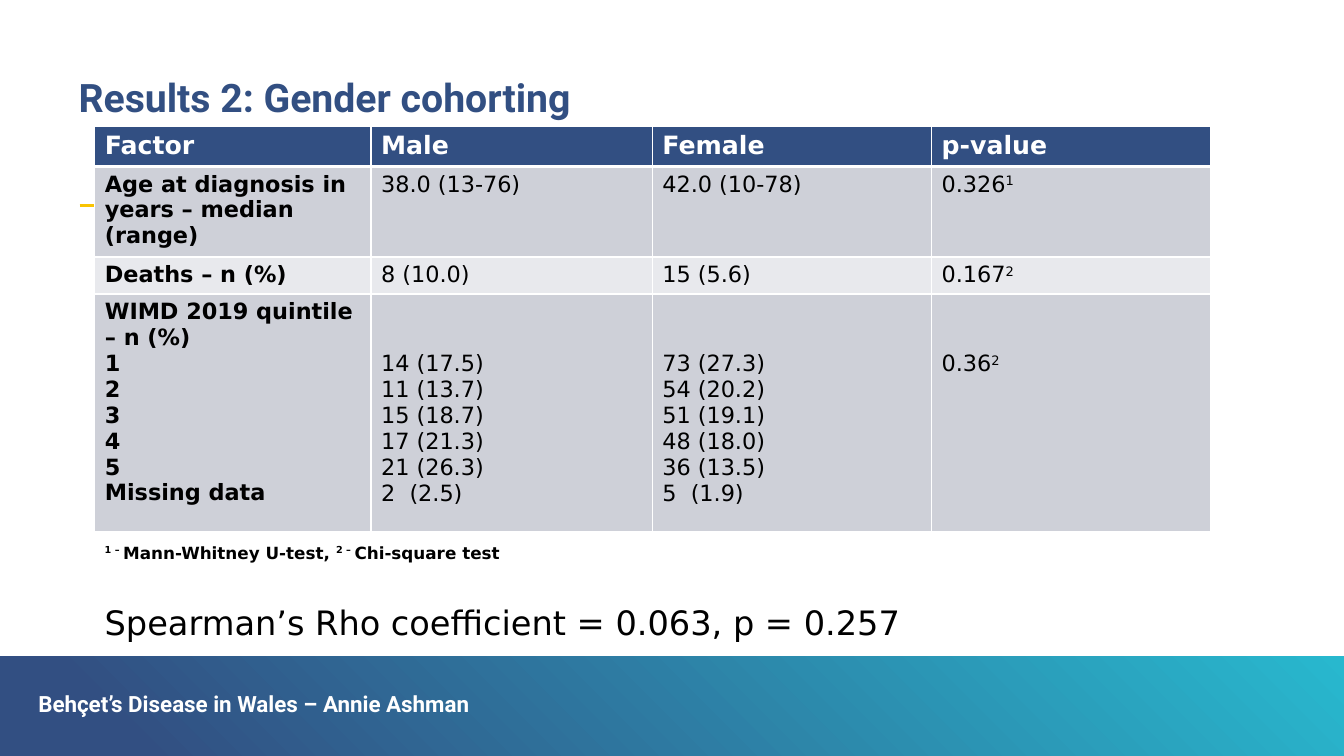
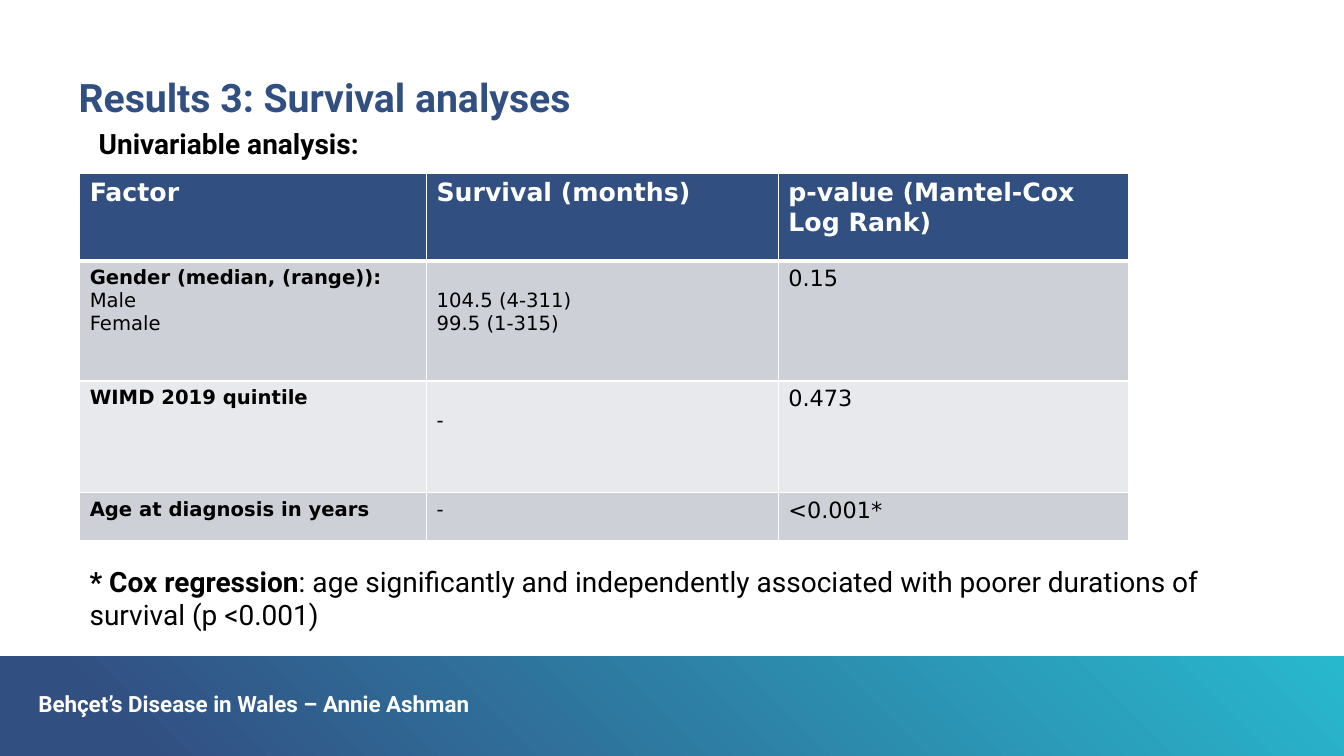
from dataclasses import dataclass

from lxml import etree
from pptx import Presentation
from pptx.dml.color import RGBColor
from pptx.enum.shapes import MSO_CONNECTOR as Connector, MSO_SHAPE as Shape
from pptx.oxml.ns import qn
from pptx.util import Inches, Pt

NAVY = RGBColor(0x32, 0x4F, 0x82)
TEAL = RGBColor(0x28, 0xB8, 0xCE)
GOLD = RGBColor(0xF9, 0xC4, 0x02)
WHITE = RGBColor(0xFF, 0xFF, 0xFF)
BLACK = RGBColor(0x00, 0x00, 0x00)
GREY = RGBColor(0xCE, 0xD0, 0xD8)
PALE = RGBColor(0xE8, 0xE9, 0xED)

HEADING_FONT = "Roboto"
BODY_FONT = "DejaVu Sans"
FOOTER = "Behçet’s Disease in Wales – Annie Ashman"
LINE_HEIGHT = 1.164  # line height of the body font, per point of size
CELL_MARGIN = 0.05


@dataclass
class Cell:
    """Paragraphs of a table cell, starting `skip` lines below its top."""
    paragraphs: list
    skip: int = 0
    size: int = 16


def raised(text):
    return text, {"superscript": True}


def add_span(para, text, font=BODY_FONT, size=16, color=BLACK, bold=False, superscript=False):
    span = para.add_run()
    span.text = text
    span.font.name = font
    span.font.size = Pt(size)
    span.font.color.rgb = color
    span.font.bold = bold
    if superscript:
        span.font._element.set("baseline", "30000")


def write(frame, paragraphs, line_spacing=None, gap=0, **style):
    """Fill a frame; a paragraph is a string or a list of strings and (text, style) pairs."""
    frame.word_wrap = True
    for index, spans in enumerate(paragraphs):
        para = frame.add_paragraph() if index else frame.paragraphs[0]
        if line_spacing:
            para.line_spacing = line_spacing
        if index and gap:
            para.space_before = Pt(gap)
        for span in [spans] if isinstance(spans, str) else spans:
            text, changes = (span, {}) if isinstance(span, str) else span
            add_span(para, text, **{**style, **changes})


def add_border(cell, bottom, top):
    properties = cell._tc.get_or_add_tcPr()
    for side, width in (("L", 1), ("R", 1), ("T", top), ("B", bottom)):
        line = etree.SubElement(properties, qn(f"a:ln{side}"), w=str(Pt(width)))
        fill = etree.SubElement(line, qn("a:solidFill"))
        etree.SubElement(fill, qn("a:srgbClr"), val=str(WHITE))


class ResultsDeck:
    def __init__(self):
        self.deck = Presentation()
        self.deck.slide_width = Inches(13.33)
        self.deck.slide_height = Inches(7.5)
        self.page = None

    def add_page(self, title):
        self.page = self.deck.slides.add_slide(self.deck.slide_layouts[6])
        self.add_band()
        self.add_text(0.38, 6.88, 4.77, 0.24, [FOOTER], margin=False, line_spacing=0.9,
                      font=HEADING_FONT, size=16, color=WHITE, bold=True)
        self.add_text(0.78, 0.78, 11.77, 0.43, [title], margin=False, line_spacing=0.9,
                      font=HEADING_FONT, size=28, color=NAVY, bold=True)

    def add_band(self):
        band = self.page.shapes.add_shape(
            Shape.RECTANGLE, 0, Inches(6.51), self.deck.slide_width, Inches(0.99))
        band.shadow.inherit = False
        band.line.fill.background()
        band.fill.gradient()
        band.fill.gradient_angle = 45
        for stop, position, color in zip(band.fill.gradient_stops, (0.1, 1), (NAVY, TEAL)):
            stop.position = position
            stop.color.rgb = color

    def add_accent(self):
        accent = self.page.shapes.add_connector(
            Connector.STRAIGHT, Inches(0.79), Inches(2.04), Inches(1.73), Inches(2.04))
        accent.line.color.rgb = GOLD
        accent.line.width = Pt(2.25)
        etree.SubElement(accent._element.spPr, qn("a:effectLst"))

    def add_text(self, left, top, width, height, paragraphs, margin=True, **style):
        box = self.page.shapes.add_textbox(
            Inches(left), Inches(top), Inches(width), Inches(height))
        frame = box.text_frame
        if not margin:
            frame.margin_left = frame.margin_right = frame.margin_top = frame.margin_bottom = 0
        write(frame, paragraphs, **style)

    def add_table(self, left, top, widths, heights, header, body):
        table = self.page.shapes.add_table(
            len(heights), len(widths), Inches(left), Inches(top),
            Inches(sum(widths)), Inches(sum(heights))).table
        for column, width in zip(table.columns, widths):
            column.width = Inches(width)
        for row, height in zip(table.rows, heights):
            row.height = Inches(height)
        rows = [[Cell([name], size=18) for name in header], *body]
        for r, row in enumerate(rows):
            for c, content in enumerate(row):
                cell = table.cell(r, c)
                add_border(cell, bottom=1 if r else 3, top=3 if r == 1 else 1)
                cell.fill.solid()
                cell.fill.fore_color.rgb = (GREY if r % 2 else PALE) if r else NAVY
                skipped = content.skip * content.size * LINE_HEIGHT / 72
                cell.margin_top = Inches(CELL_MARGIN + skipped)
                write(cell.text_frame, content.paragraphs, size=content.size,
                      color=BLACK if r else WHITE, bold=r == 0 or c == 0)


def add_gender_page(results):
    results.add_page("Results 2: Gender cohorting")
    results.add_accent()
    male = ["14 (17.5)", "11 (13.7)", "15 (18.7)", "17 (21.3)", "21 (26.3)", "2  (2.5)"]
    female = ["73 (27.3)", "54 (20.2)", "51 (19.1)", "48 (18.0)", "36 (13.5)", "5  (1.9)"]
    quintiles = ["WIMD 2019 quintile – n (%)", "1", "2", "3", "4", "5", "Missing data"]
    results.add_table(
        0.94, 1.25, [2.74, 2.79, 2.77, 2.77], [0.39, 0.86, 0.36, 2.36],
        ["Factor", "Male", "Female", "p-value"],
        [
            [Cell(["Age at diagnosis in years – median (range)"]), Cell(["38.0 (13-76)"]),
             Cell(["42.0 (10-78)"]), Cell([["0.326", raised("1")]])],
            [Cell(["Deaths – n (%)"]), Cell(["8 (10.0)"]),
             Cell(["15 (5.6)"]), Cell([["0.167", raised("2")]])],
            [Cell(quintiles), Cell(male, skip=2),
             Cell(female, skip=2), Cell([["0.36", raised("2")]], skip=2)],
        ])
    tests = [raised("1 – "), "Mann-Whitney U-test, ", raised("2 – "), "Chi-square test"]
    spearman = ("Spearman’s Rho coefficient = 0.063, p = 0.257", {"size": 24, "bold": False})
    results.add_text(0.94, 5.33, 10.84, 1.11, [tests, [spearman]], gap=28, size=12, bold=True)


def add_survival_page(results):
    results.add_page("Results 3: Survival analyses")
    plain = {"bold": False}
    gender = ["Gender (median, (range)):", [("Male", plain)], [("Female", plain)]]
    results.add_table(
        0.79, 1.72, [3.44, 3.49, 3.47], [0.87, 1.19, 1.11, 0.47],
        ["Factor", "Survival (months)", "p-value (Mantel-Cox Log Rank)"],
        [
            [Cell(gender, size=14),
             Cell(["104.5 (4-311)", "99.5 (1-315)"], skip=1, size=14), Cell(["0.15"])],
            [Cell(["WIMD 2019 quintile"], size=14),
             Cell(["-"], skip=1, size=14), Cell(["0.473"])],
            [Cell(["Age at diagnosis in years"], size=14),
             Cell(["-"], size=14), Cell(["<0.001*"])],
        ])
    regression = [
        ("* Cox regression", {"bold": True}),
        ": age significantly and independently associated with poorer durations of "
        "survival (p <0.001)",
    ]
    results.add_text(0.79, 5.55, 12.1, 0.77, [regression], font=HEADING_FONT, size=20)
    results.add_text(0.88, 1.21, 9.22, 0.44, ["Univariable analysis:"],
                     font=HEADING_FONT, size=20, bold=True)


def main():
    results = ResultsDeck()
    add_gender_page(results)
    add_survival_page(results)
    results.deck.save("out.pptx")


if __name__ == "__main__":
    main()
